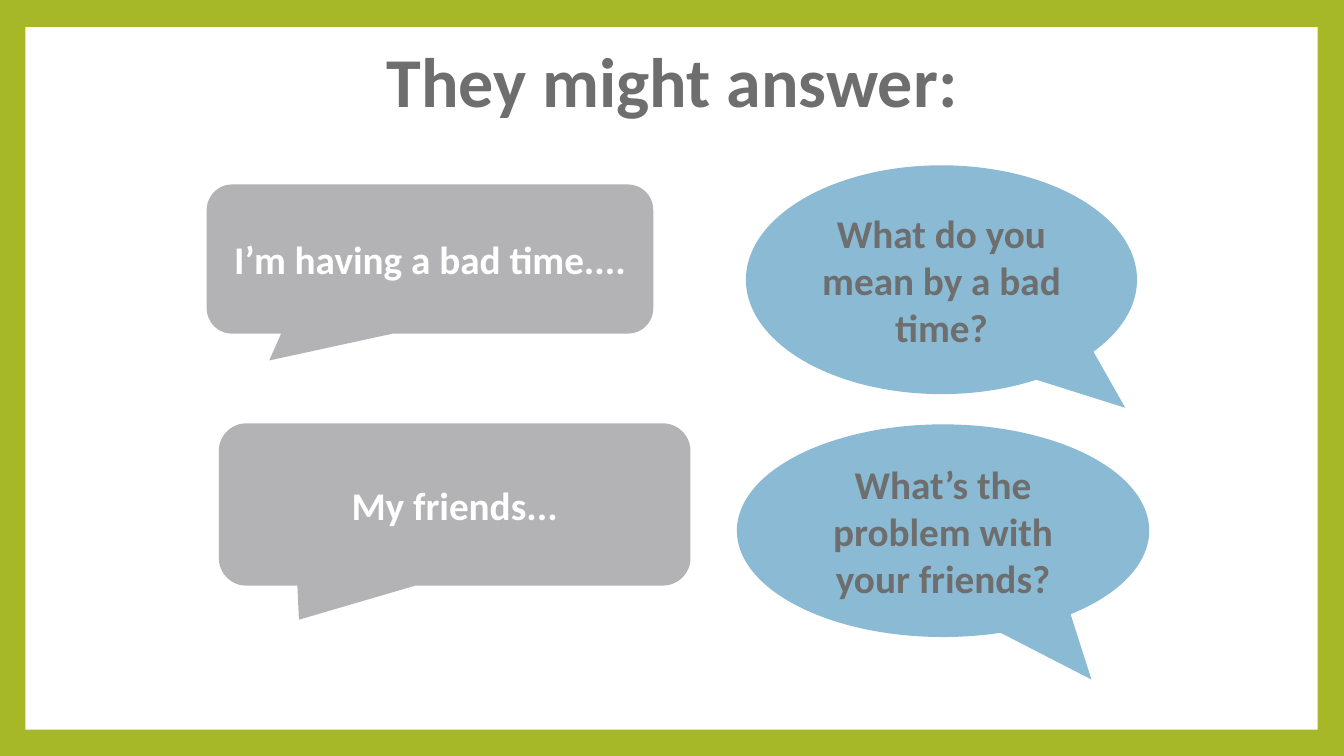
"""Build a slide of four speech bubbles that answer one another."""
from pptx import Presentation
from pptx import util as u
from pptx.dml.color import RGBColor
from pptx.enum import shapes, text

GREEN = RGBColor(0xA6, 0xB7, 0x27)
WHITE = RGBColor(0xFF, 0xFF, 0xFF)
DARK = RGBColor(0x6E, 0x6E, 0x6E)
GREY = RGBColor(0xB3, 0xB3, 0xB5)
BLUE = RGBColor(0x8A, 0xBA, 0xD4)
WIDE, HIGH = u.Inches(13.33), u.Inches(7.5)
KIND = shapes.MSO_SHAPE
ROUND, OVAL = KIND.ROUNDED_RECTANGULAR_CALLOUT, KIND.OVAL_CALLOUT

BUBBLES = [
    ("I’m having a bad time....", ROUND, (15.38, 24.4, 33.23, 19.73),
     (-0.36, 0.68, 0.17), GREY, WHITE),
    ("What do you mean by a bad time?", OVAL, (55.5, 21.87, 29.1, 30.27),
     (0.47, 0.56), BLUE, DARK),
    ("My friends...", ROUND, (16.28, 56, 35.1, 21.47),
     (-0.33, 0.71, 0.17), GREY, WHITE),
    ("What’s the problem with your friends?", OVAL, (54.83, 56.13, 30.68, 28.13),
     (0.36, 0.7), BLUE, DARK),
]


def place(box):
    """Turn percentages of the slide into left, top, width and height."""
    return [int(side * share / 100) for side, share in zip((WIDE, HIGH) * 2, box)]


def write(shape, words, size, color):
    """Set centred bold text in a shape."""
    frame = shape.text_frame
    frame.text = words
    frame.word_wrap = True
    frame.auto_size = text.MSO_AUTO_SIZE.NONE
    frame.vertical_anchor = text.MSO_ANCHOR.MIDDLE
    para = frame.paragraphs[0]
    para.alignment = text.PP_ALIGN.CENTER
    font = para.runs[0].font
    font.name, font.size, font.bold = "Calibri", u.Pt(size), True
    font.color.rgb = color


def block(slide, kind, box, fill):
    """Add a flat shape without an outline."""
    shape = slide.shapes.add_shape(kind, *place(box))
    shape.shadow.inherit = False
    shape.fill.solid()
    shape.fill.fore_color.rgb = fill
    shape.line.fill.background()
    return shape


def panel(slide):
    """Lay the white panel behind everything else on the green ground."""
    slide.background.fill.solid()
    slide.background.fill.fore_color.rgb = GREEN
    sheet = block(slide, KIND.RECTANGLE, (1.88, 3.6, 96.15, 92.93), WHITE)
    slide.shapes.title._element.addprevious(sheet._element)


def head(slide, words):
    """Move and format the title."""
    title = slide.shapes.title
    title.left, title.top, title.width, title.height = place((16.28, 4.53, 67.5, 13.33))
    write(title, words, 50, DARK)
    title.text_frame.paragraphs[0].line_spacing = 0.9


def bubble(slide, words, kind, box, tail, fill, color):
    """Add a speech bubble with its tail."""
    shape = block(slide, kind, box, fill)
    for spot, value in enumerate(tail):
        shape.adjustments[spot] = value
    write(shape, words, 28, color)


def main():
    """Build and save the slide."""
    deck = Presentation()
    deck.slide_width, deck.slide_height = WIDE, HIGH
    slide = deck.slides.add_slide(deck.slide_layouts[5])
    panel(slide)
    head(slide, "They might answer:")
    for item in BUBBLES:
        bubble(slide, *item)
    deck.save("out.pptx")


if __name__ == "__main__":
    main()
